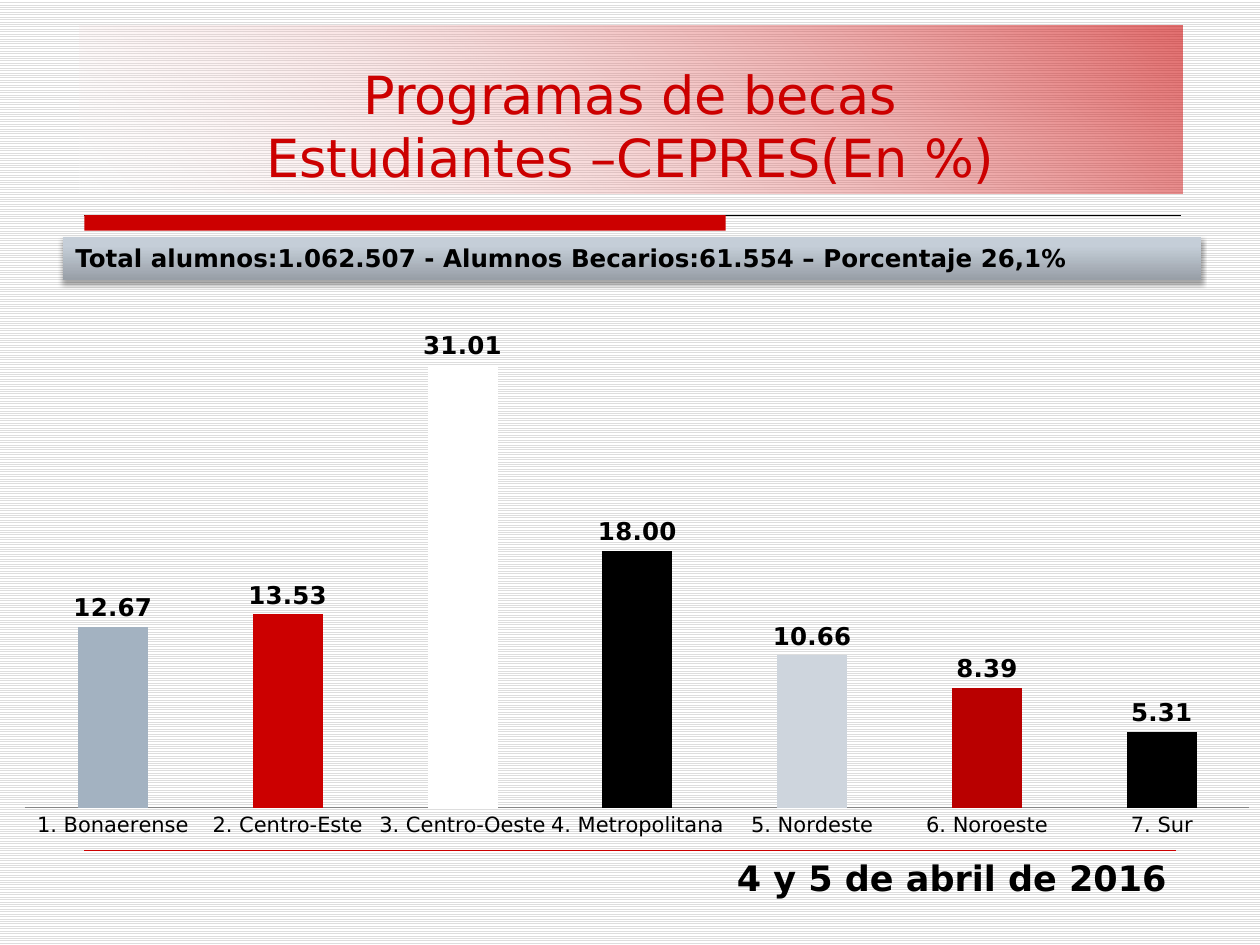
import pptx
import pptx.chart.data
import pptx.dml.color
import pptx.enum.chart
import pptx.enum.dml
import pptx.enum.shapes
import pptx.enum.text
import pptx.oxml
import pptx.oxml.ns
import pptx.util
from pptx.util import Cm

A = 'xmlns:a="http://schemas.openxmlformats.org/drawingml/2006/main"'
C = 'xmlns:c="http://schemas.openxmlformats.org/drawingml/2006/chart"'
FONT = "DejaVu Sans"


def rgb(color):
    return pptx.dml.color.RGBColor.from_string(color)


def set_gradient(shape, angle, stops):
    """Fill with (position %, colour, opacity %) stops; angle runs counter-clockwise."""
    shape.fill.gradient()
    shape.fill.gradient_angle = angle
    stop_list = shape.fill._fill._gradFill.find(pptx.oxml.ns.qn("a:gsLst"))
    for old in list(stop_list):
        stop_list.remove(old)
    for pos, color, alpha in stops:
        stop_list.append(pptx.oxml.parse_xml(
            f'<a:gs {A} pos="{pos * 1000}"><a:srgbClr val="{color}">'
            f'<a:alpha val="{alpha * 1000}"/></a:srgbClr></a:gs>'))


prs = pptx.Presentation()
prs.slide_width, prs.slide_height = Cm(25.4), Cm(19.05)
s = prs.slides.add_slide(prs.slide_layouts[5])

# Striped background
bg = s.background.fill
bg.patterned()
bg.pattern = pptx.enum.dml.MSO_PATTERN.LIGHT_HORIZONTAL
bg.fore_color.rgb = rgb("DDDDDD")
bg.back_color.rgb = rgb("FFFFFF")

# Rules under the title and above the date
for x1, x2, y, color, width in [(1.7, 23.8, 4.34, "000000", 0.75),
                                (1.7, 23.7, 17.15, "CC0000", 0.25)]:
    rule = s.shapes.add_connector(pptx.enum.shapes.MSO_CONNECTOR.STRAIGHT,
                                  Cm(x1), Cm(y), Cm(x2), Cm(y))
    rule.line.color.rgb = rgb(color)
    rule.line.width = pptx.util.Pt(width)
    rule._element.spPr.append(pptx.oxml.parse_xml(f"<a:effectLst {A}/>"))

RECT = pptx.enum.shapes.MSO_SHAPE.RECTANGLE
bar = s.shapes.add_shape(RECT, Cm(1.7), Cm(4.34), Cm(12.93), Cm(0.31))
bar.shadow.inherit = False
bar.fill.solid()
bar.fill.fore_color.rgb = rgb("CC0000")
bar.line.fill.background()

# Title, totals banner and date
title = s.shapes.title
title.left, title.top, title.width, title.height = Cm(1.6), Cm(0.52), Cm(22.23), Cm(3.39)
set_gradient(title, 45, [(0, "FFFFFF", 16), (100, "CC0000", 57)])

banner = s.shapes.add_shape(RECT, Cm(1.27), Cm(4.78), Cm(22.94), Cm(0.86))
set_gradient(banner, 90, [(0, "989FA7", 100), (80, "C5CED8", 100), (100, "C6CFDA", 100)])
banner.line.fill.background()
banner.shadow.inherit = False
banner._element.spPr.find(pptx.oxml.ns.qn("a:effectLst")).append(pptx.oxml.parse_xml(
    f'<a:outerShdw {A} blurRad="39400" dist="22900" dir="5400000" rotWithShape="0">'
    '<a:srgbClr val="000000"><a:alpha val="35000"/></a:srgbClr></a:outerShdw>'))

date = s.shapes.add_textbox(Cm(0.84), Cm(17.15), Cm(22.94), Cm(1.1))

ALIGN = pptx.enum.text.PP_ALIGN
ANCHOR = pptx.enum.text.MSO_ANCHOR
for sp, text, size, color, bold, align, anchor in [
    (title, "Programas de becas\vEstudiantes –CEPRES(En %)",
     30, "CC0000", False, ALIGN.CENTER, ANCHOR.BOTTOM),
    (banner, "Total alumnos:1.062.507 - Alumnos Becarios:61.554 – Porcentaje 26,1%",
     14, "000000", True, ALIGN.LEFT, ANCHOR.TOP),
    (date, "4 y 5 de abril de 2016", 20, "000000", True, ALIGN.RIGHT, ANCHOR.TOP),
]:
    tf = sp.text_frame
    tf.text = text
    tf.word_wrap = True
    tf.auto_size = pptx.enum.text.MSO_AUTO_SIZE.NONE
    tf.vertical_anchor = anchor
    p = tf.paragraphs[0]
    p.alignment = align
    for r in p.runs:
        r.font.name = FONT
        r.font.size = pptx.util.Pt(size)
        r.font.bold = bold
        r.font.color.rgb = rgb(color)

# Column chart by region
regions = [("1. Bonaerense", 12.67, "A3B2C1"), ("2. Centro-Este", 13.53, "CC0000"),
           ("3. Centro-Oeste", 31.01, "FFFFFF"), ("4. Metropolitana", 18, "000000"),
           ("5. Nordeste", 10.66, "CED5DD"), ("6. Noroeste", 8.39, "B90000"),
           ("7. Sur", 5.31, "000000")]
data = pptx.chart.data.CategoryChartData(number_format="0.00")
data.categories = [name for name, _, _ in regions]
data.add_series("Series 1", [value for _, value, _ in regions])
chart = s.shapes.add_chart(pptx.enum.chart.XL_CHART_TYPE.COLUMN_CLUSTERED,
                           Cm(0), Cm(5.87), Cm(25.7), Cm(11.2), data).chart
chart.has_legend = False
chart.has_title = False
chart.font.name = FONT
chart.font.size = pptx.util.Pt(10)
chart.font.color.rgb = rgb("000000")

value_axis = chart.value_axis
value_axis.visible = False
value_axis.has_major_gridlines = False
value_axis.minimum_scale, value_axis.maximum_scale = 0, 35
category_axis = chart.category_axis
category_axis.major_tick_mark = pptx.enum.chart.XL_TICK_MARK.NONE
category_axis.tick_labels.font.size = pptx.util.Pt(12)
category_axis.format.line.color.rgb = rgb("868686")

plot = chart.plots[0]
plot.gap_width = 150
plot.vary_by_categories = False
series = plot.series[0]
series.format.fill.solid()
series.format.fill.fore_color.rgb = rgb(regions[0][2])
for i, (_, _, color) in enumerate(regions):
    fill = series.points[i].format.fill
    fill.solid()
    fill.fore_color.rgb = rgb(color)

labels = series.data_labels
labels.show_value = True
labels.number_format = "0.00"
labels.number_format_is_linked = False
labels.position = pptx.enum.chart.XL_LABEL_POSITION.OUTSIDE_END
labels.font.size = pptx.util.Pt(14)
labels.font.bold = True

# Fixed inner plot area
plot_area = chart._chartSpace.chart.plotArea
for old in plot_area.findall(pptx.oxml.ns.qn("c:layout")):
    plot_area.remove(old)
plot_area.insert(0, pptx.oxml.parse_xml(
    f'<c:layout {C}><c:manualLayout><c:layoutTarget val="inner"/>'
    '<c:xMode val="edge"/><c:yMode val="edge"/><c:x val="0.02"/><c:y val="0.03"/>'
    '<c:w val="0.96"/><c:h val="0.9"/></c:manualLayout></c:layout>'))

prs.save("out.pptx")
